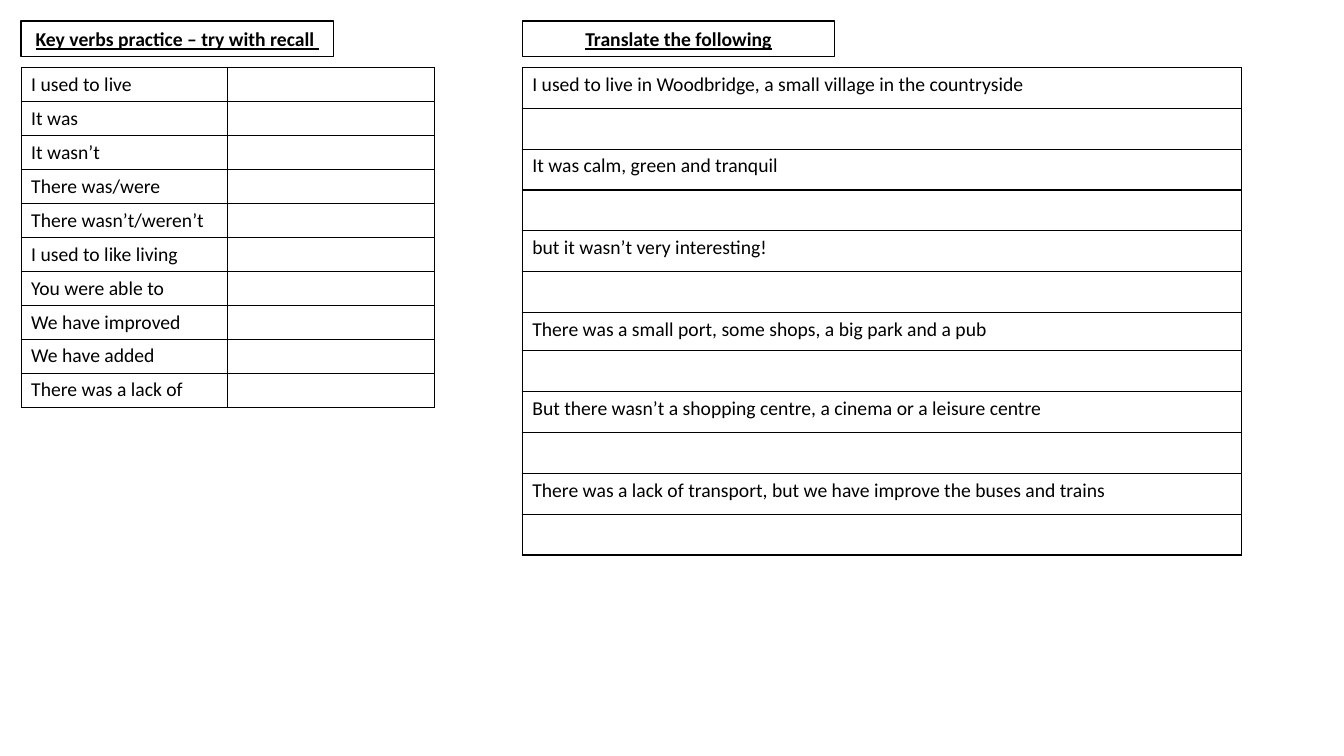
"""Builds a one-slide worksheet of key verbs and sentences to translate."""
from dataclasses import dataclass

from lxml import etree
from pptx import Presentation
from pptx import util as u
from pptx.dml.color import RGBColor
from pptx.enum import shapes, text
from pptx.oxml import ns


@dataclass(frozen=True)
class Theme:
    ink: str = "000000"
    paper: str = "FFFFFF"
    font: str = "Calibri"
    size: float = 14
    line: float = 1


@dataclass(frozen=True)
class Exercise:
    heading: str
    left: float
    columns: int
    width: float
    row_heights: list[float]
    prompts: dict[tuple[int, int], str]


THEME = Theme()
BODY = {"name": THEME.font, "size": u.Pt(THEME.size), "bold": False}
HEADING = BODY | {"bold": True, "underline": True}

VERBS = [
    "I used to live",
    "It was",
    "It wasn’t",
    "There was/were",
    "There wasn’t/weren’t",
    "I used to like living",
    "You were able to",
    "We have improved",
    "We have added",
    "There was a lack of",
]
SENTENCES = [
    "I used to live in Woodbridge, a small village in the countryside",
    "It was calm, green and tranquil",
    "but it wasn’t very interesting!",
    "There was a small port, some shops, a big park and a pub",
    "But there wasn’t a shopping centre, a cinema or a leisure centre",
    "There was a lack of transport, but we have improve the buses and trains",
]
SENTENCE_ROWS = [4.46 / 11] * 12
SENTENCE_ROWS[6] = 0.38

EXERCISES = [
    Exercise(
        "Key verbs practice – try with recall ", 0.21, 2, 4.1,
        [3.37 / len(VERBS)] * len(VERBS),
        {(row, 0): verb for row, verb in enumerate(VERBS)},
    ),
    Exercise(
        "Translate the following", 5.18, 1, 7.13, SENTENCE_ROWS,
        {(2 * i, 0): sentence for i, sentence in enumerate(SENTENCES)},
    ),
]


def write(paragraph, words: str, formats: dict) -> None:
    """Add formatted words to a paragraph."""
    run = paragraph.add_run()
    run.text = words
    for name, value in formats.items():
        setattr(run.font, name, value)
    run.font.color.rgb = RGBColor.from_string(THEME.ink)


def rule_cell(cell) -> None:
    """Draw the four borders of a cell and leave it unfilled."""
    properties = cell._tc.get_or_add_tcPr()
    for side in ("a:lnL", "a:lnR", "a:lnT", "a:lnB"):
        border = etree.SubElement(properties, ns.qn(side), w=str(u.Pt(THEME.line)))
        fill = etree.SubElement(border, ns.qn("a:solidFill"))
        etree.SubElement(fill, ns.qn("a:srgbClr"), val=THEME.ink)
    cell.fill.background()


def draw_heading(slide, exercise: Exercise) -> None:
    """Draw the boxed heading of an exercise."""
    box = slide.shapes.add_shape(
        shapes.MSO_SHAPE.RECTANGLE,
        u.Inches(exercise.left), u.Inches(0.21), u.Inches(3.1), u.Inches(0.35),
    )
    box.shadow.inherit = False
    box.fill.solid()
    box.fill.fore_color.rgb = RGBColor.from_string(THEME.paper)
    box.line.color.rgb = RGBColor.from_string(THEME.ink)
    box.line.width = u.Pt(THEME.line)
    frame = box.text_frame
    frame.vertical_anchor = text.MSO_ANCHOR.MIDDLE
    title = frame.paragraphs[0]
    title.alignment = text.PP_ALIGN.CENTER
    write(title, exercise.heading, HEADING)


def draw_answers(slide, exercise: Exercise) -> None:
    """Draw the ruled table of prompts and answer spaces."""
    heights = exercise.row_heights
    answers = slide.shapes.add_table(
        len(heights), exercise.columns,
        u.Inches(exercise.left), u.Inches(0.67),
        u.Inches(exercise.width), u.Inches(sum(heights)),
    ).table
    answers.first_row = answers.horz_banding = False
    for column in answers.columns:
        column.width = u.Inches(exercise.width / exercise.columns)
    for r, height in enumerate(heights):
        answers.rows[r].height = u.Inches(height)
        for c in range(exercise.columns):
            cell = answers.cell(r, c)
            rule_cell(cell)
            entry = cell.text_frame.paragraphs[0]
            if (r, c) in exercise.prompts:
                write(entry, exercise.prompts[r, c], BODY)
            else:
                etree.SubElement(
                    entry._p, ns.qn("a:endParaRPr"), sz=str(int(THEME.size * 100))
                )


def main() -> None:
    """Build and save the worksheet."""
    worksheet = Presentation()
    worksheet.slide_width = u.Inches(13.33)
    worksheet.slide_height = u.Inches(7.5)
    slide = worksheet.slides.add_slide(worksheet.slide_layouts[6])
    for exercise in EXERCISES:
        draw_heading(slide, exercise)
        draw_answers(slide, exercise)
    worksheet.save("out.pptx")


if __name__ == "__main__":
    main()
